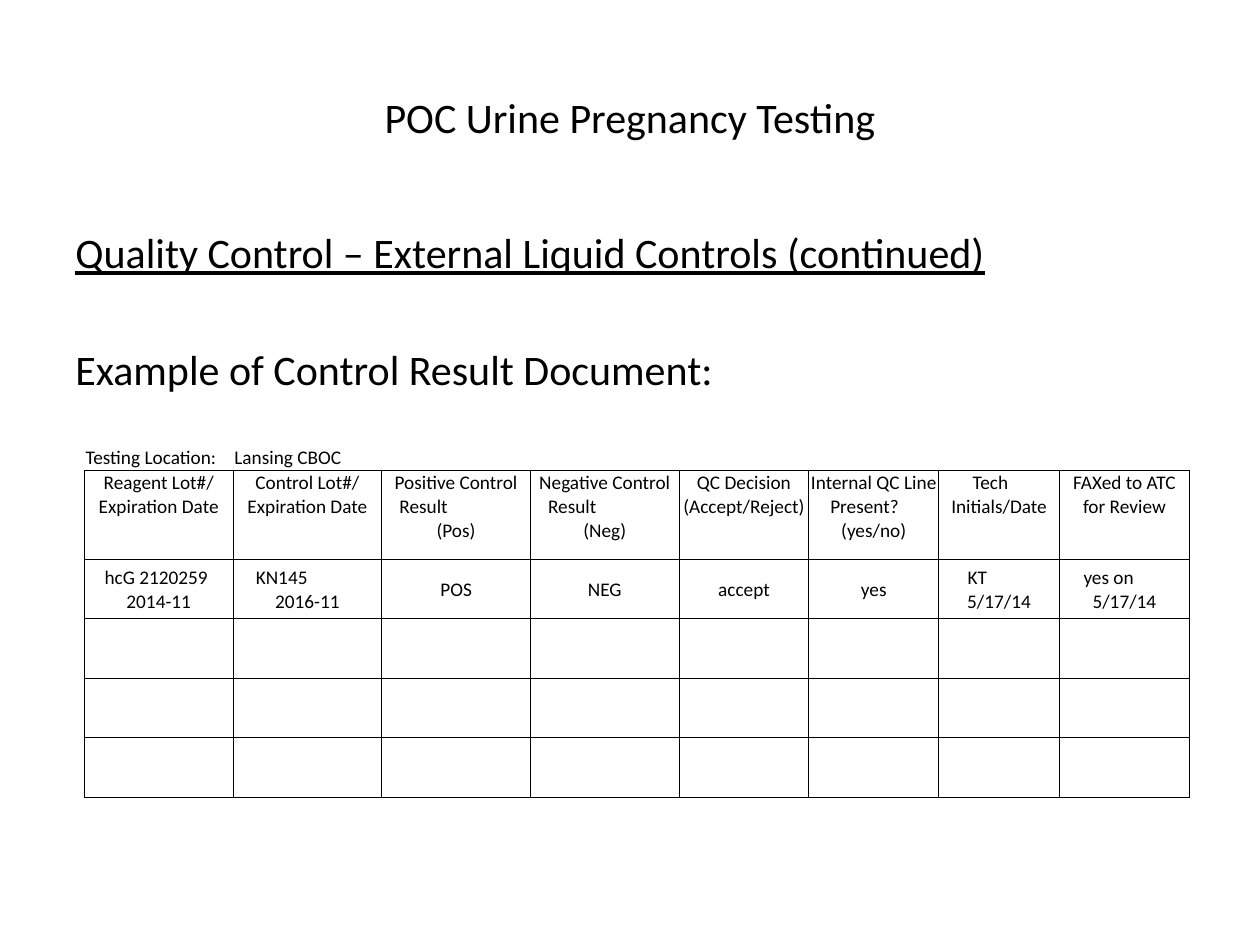
"""Build the urine pregnancy testing slide with its control result table."""
from dataclasses import dataclass

from lxml.etree import SubElement
from pptx import Presentation
from pptx.dml.color import RGBColor
from pptx.enum.text import MSO_ANCHOR, PP_ALIGN
from pptx.oxml.ns import qn
from pptx.util import Inches, Pt


@dataclass(frozen=True)
class Theme:
    font: str = "Calibri"
    ink: str = "000000"
    heading: int = 24
    cell: int = 11
    border: float = 0.5
    section_gap: int = 38


theme = Theme()
presentation = Presentation()
presentation.slide_width = Inches(10)
presentation.slide_height = Inches(7.5)
column = presentation.slide_width / 100
row = presentation.slide_height / 75
slide = presentation.slides.add_slide(presentation.slide_layouts[6])


def style_paragraph(paragraph, size, alignment, underline=False):
    paragraph.alignment = alignment
    for run in paragraph.runs:
        run.font.name = theme.font
        run.font.size = Pt(size)
        run.font.underline = underline
        run.font.color.rgb = RGBColor.from_string(theme.ink)


def draw_borders(cell, visible_sides):
    properties = cell._tc.get_or_add_tcPr()
    for side in "LRTB":
        line = SubElement(properties, qn(f"a:ln{side}"), w=str(Pt(theme.border)))
        if side in visible_sides:
            fill = SubElement(line, qn("a:solidFill"))
            SubElement(fill, qn("a:srgbClr"), val=theme.ink)
        else:
            SubElement(line, qn("a:noFill"))


headings = [
    (3, 12.5, MSO_ANCHOR.MIDDLE, PP_ALIGN.CENTER, ["POC Urine Pregnancy Testing"]),
    (17.5, 49.5, MSO_ANCHOR.TOP, PP_ALIGN.LEFT, [
        "Quality Control – External Liquid Controls (continued)",
        "Example of Control Result Document:",
    ]),
]
for top, height, anchor, alignment, lines in headings:
    box = slide.shapes.add_textbox(
        int(5 * column), int(top * row), int(90 * column), int(height * row))
    box.text_frame.word_wrap = True
    box.text_frame.vertical_anchor = anchor
    box.text_frame.text = "\n".join(lines)
    for index, paragraph in enumerate(box.text_frame.paragraphs):
        underline = len(lines) > 1 and index == 0
        style_paragraph(paragraph, theme.heading, alignment, underline)
        if index:
            paragraph.space_before = Pt(theme.section_gap)

column_widths = [11.8] * 4 + [10.3, 10.3, 9.6, 10.3]
row_heights = [2.3, 7.1] + [4.72] * 4
cell_texts = [
    ["Testing Location:", "Lansing CBOC"],
    ["Reagent Lot#/ Expiration Date", "Control Lot#/ Expiration Date",
     "Positive Control\nResult\n(Pos)", "Negative Control\nResult\n(Neg)",
     "QC Decision (Accept/Reject)", "Internal QC Line\nPresent?\n(yes/no)",
     "Tech\nInitials/Date", "FAXed to ATC for Review"],
    ["hcG 2120259\n2014-11", "KN145\n2016-11", "POS", "NEG", "accept", "yes",
     "KT\n5/17/14", "yes on\n5/17/14"],
]
line_indents = {"Result": 1.3, "Present?": 1.6, "Tech": 2.6, "hcG 2120259": 1.5,
                "KN145": 1.7, "KT": 2.2, "yes on": 1.8}
row_anchors = [MSO_ANCHOR.BOTTOM, MSO_ANCHOR.TOP] + [MSO_ANCHOR.MIDDLE] * 4

table = slide.shapes.add_table(
    len(row_heights), len(column_widths), int(6.7 * column), int(35 * row),
    int(sum(column_widths) * column), int(sum(row_heights) * row)).table
table.first_row = False
table.horz_banding = False
for table_column, width in zip(table.columns, column_widths):
    table_column.width = int(width * column)

for row_index, height in enumerate(row_heights):
    table.rows[row_index].height = int(height * row)
    texts = cell_texts[row_index] if row_index < len(cell_texts) else []
    for column_index in range(len(column_widths)):
        cell = table.cell(row_index, column_index)
        draw_borders(cell, "LRTB" if row_index else "B")
        cell.fill.background()
        cell.vertical_anchor = row_anchors[row_index]
        cell.margin_left = cell.margin_right = cell.margin_top = Inches(0.01)
        cell.margin_bottom = 0
        if column_index < len(texts):
            cell.text_frame.text = texts[column_index]
        for paragraph in cell.text_frame.paragraphs:
            indent = line_indents.get(paragraph.text)
            left_aligned = row_index == 0 or indent
            style_paragraph(paragraph, theme.cell,
                            PP_ALIGN.LEFT if left_aligned else PP_ALIGN.CENTER)
            if indent:
                paragraph._p.get_or_add_pPr().set("marL", str(int(indent * column)))
            if not paragraph.runs:
                SubElement(paragraph._p, qn("a:endParaRPr"), sz=str(theme.cell * 100))

presentation.save("out.pptx")
